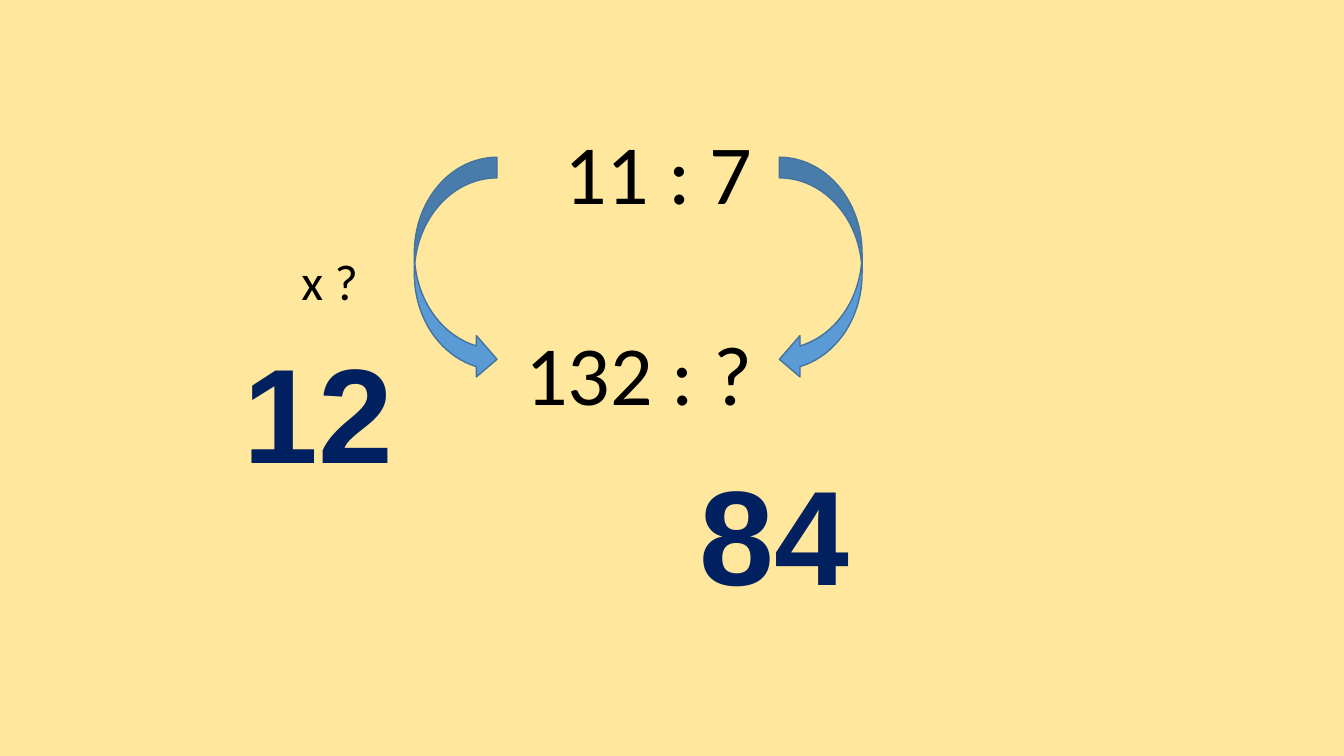
from pptx import Presentation
from pptx.dml.color import RGBColor
from pptx.enum.shapes import MSO_SHAPE as Shape
from pptx.enum.text import PP_ALIGN as Align
from pptx.util import Inches, Pt

# Content: lines, style, box (left, top, width, height in inches)
TEXTS = [
    (["11 : 7", "132 : ?"], "ratio", (5.09, 1.15, 2.47, 4.14)),
    (["12"], "answer", (2.32, 3.22, 1.79, 1.72)),
    (["x ?"], "factor", (2.89, 2.43, 0.77, 0.71)),
    (["84"], "answer", (6.84, 4.43, 1.79, 1.72)),
]
ARROW_TOP, ARROW_WIDTH, ARROW_HEIGHT = 1.56, 0.82, 2.21
ARROWS = [(7.73, False), (4.11, True)]  # left edge, mirrored

THEME = {
    "background": "FFE79E",
    "arrow": "5B9BD5",
    "outline": "43739E",
    "ratio": {"name": "Calibri", "size": Pt(60), "bold": False, "color": "000000"},
    "factor": {"name": "Calibri", "size": Pt(36), "bold": False, "color": "000000"},
    "answer": {"name": "Arial", "size": Pt(96), "bold": True, "color": "002060"},
}
RATIO_GAP = Pt(71)


def paint(fill, color):
    fill.solid()
    fill.fore_color.rgb = RGBColor.from_string(color)


def add_lines(slide, lines, style, box):
    frame = slide.shapes.add_textbox(*map(Inches, box)).text_frame
    frame.word_wrap = style == "answer"
    for number, line in enumerate(lines):
        paragraph = frame.add_paragraph() if number else frame.paragraphs[0]
        paragraph.text = line
        paragraph.alignment = Align.RIGHT if style == "ratio" else Align.LEFT
        if number:
            paragraph.space_before = RATIO_GAP
        font = paragraph.runs[0].font
        for attribute, value in THEME[style].items():
            if attribute == "color":
                paint(font.fill, value)
            else:
                setattr(font, attribute, value)


def add_arrow(slide, left, mirrored):
    box = (left, ARROW_TOP, ARROW_WIDTH, ARROW_HEIGHT)
    arrow = slide.shapes.add_shape(Shape.CURVED_LEFT_ARROW, *map(Inches, box))
    arrow.shadow.inherit = False
    paint(arrow.fill, THEME["arrow"])
    paint(arrow.line.fill, THEME["outline"])
    arrow.line.width = Pt(1)
    if mirrored:
        arrow._element.spPr.xfrm.set("flipH", "1")


def main():
    deck = Presentation()
    deck.slide_width, deck.slide_height = Inches(13.33), Inches(7.5)
    slide = deck.slides.add_slide(deck.slide_layouts[6])
    paint(slide.background.fill, THEME["background"])

    # Ratios and answers, then the arrows linking the rows
    for lines, style, box in TEXTS:
        add_lines(slide, lines, style, box)
    for left, mirrored in ARROWS:
        add_arrow(slide, left, mirrored)

    deck.save("out.pptx")


if __name__ == "__main__":
    main()
